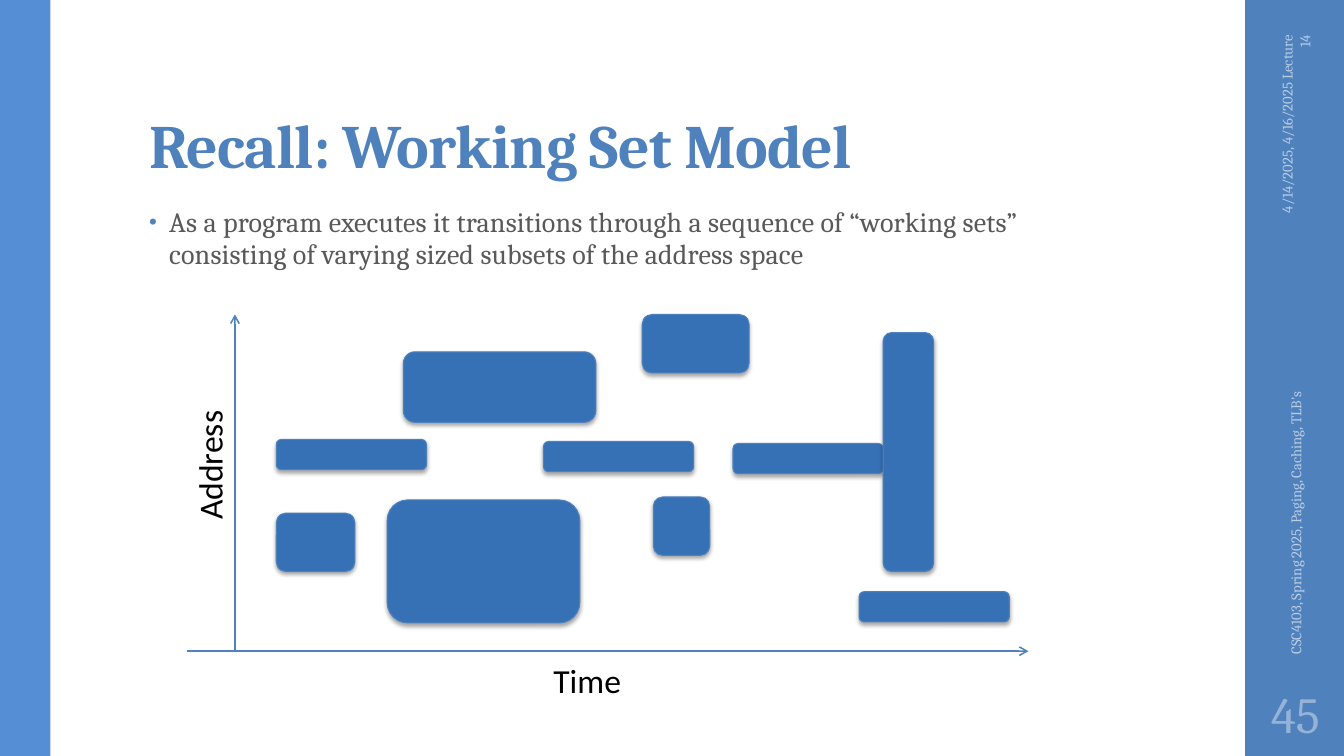
from lxml import etree
from pptx import Presentation
from pptx import util as u
from pptx.dml.color import RGBColor
from pptx.enum import shapes, text
from pptx.oxml import parse_xml
from pptx.oxml.ns import qn, nsdecls

PX = 9144  # EMU, 100 px to the inch
COLORS = {
    "accent": "4F81BD", "left bar": "558ED5", "block": "3771B5", "body": "595959",
    "footer": "B9CDE5", "number": "95B3D7", "label": "000000",
}


def rgb(name):
    return RGBColor.from_string(COLORS[name])


def write(shape, wording, size, color, font="Cambria", align=text.PP_ALIGN.LEFT,
          anchor=text.MSO_ANCHOR.TOP, wrap=True):
    """Fill a shape with one formatted paragraph and return the paragraph."""
    frame = shape.text_frame
    frame.word_wrap = wrap
    frame.vertical_anchor = anchor
    frame.text = wording
    paragraph = frame.paragraphs[0]
    paragraph.alignment = align
    paragraph.font.name = font
    paragraph.font.size = u.Pt(size)
    paragraph.font.color.rgb = rgb(color)
    return paragraph


presentation = Presentation()
presentation.slide_width = u.Emu(1333 * PX)
presentation.slide_height = u.Emu(750 * PX)
slide = presentation.slides.add_slide(presentation.slide_layouts[5])

# Side bars
for left, width, color in [(1235, 100, "accent"), (0, 50, "left bar")]:
    bar = slide.shapes.add_shape(
        shapes.MSO_SHAPE.RECTANGLE, left * PX, 0, width * PX, 750 * PX)
    bar.shadow.inherit = False
    bar.fill.solid()
    bar.fill.fore_color.rgb = rgb(color)
    bar.line.fill.background()

# Title
title = slide.shapes.title
title.left, title.top, title.width, title.height = (
    length * PX for length in (138, 32, 1060, 153))
paragraph = write(title, "Recall: Working Set Model", 44, "accent",
                  anchor=text.MSO_ANCHOR.BOTTOM)
paragraph.font.bold = True
paragraph.line_spacing = 0.9
paragraph.runs[0]._r.get_or_add_rPr().set("spc", "-50")
title.text_frame.auto_size = text.MSO_AUTO_SIZE.NONE
title.text_frame.margin_top = 3 * PX
title.text_frame.margin_bottom = 5 * PX

# Bulleted statement
body = slide.shapes.add_textbox(138 * PX, 200 * PX, 940 * PX, 476 * PX)
paragraph = write(
    body,
    "As a program executes it transitions through a sequence of “working sets” "
    "consisting of varying sized subsets of the address space", 20, "body")
paragraph.line_spacing = 0.95
paragraph.space_before = u.Pt(14)
paragraph.space_after = u.Pt(2)
paragraph.runs[0]._r.get_or_add_rPr().set("spc", "10")
properties = paragraph._p.get_or_add_pPr()
properties.set("marL", str(20 * PX))
properties.set("indent", str(-20 * PX))
bullet_parts = [
    f'<a:buClr {nsdecls("a")}><a:srgbClr val="{COLORS["accent"]}"/></a:buClr>',
    f'<a:buSzPct {nsdecls("a")} val="80000"/>',
    f'<a:buFont {nsdecls("a")} typeface="Arial"/>',
    f'<a:buChar {nsdecls("a")} char="•"/>',
]
default_font = properties.find(qn("a:defRPr"))
for part in bullet_parts:
    default_font.addprevious(parse_xml(part))

# Footer texts on the right bar
footers = [
    (1181, 109, 208, "4/14/2025, 4/16/2025 Lecture 14", text.PP_ALIGN.RIGHT),
    (1089, 443, 392, "CSC4103, Spring 2025, Paging, Caching, TLB's", text.PP_ALIGN.LEFT),
]
for left, top, width, wording, align in footers:
    footer = slide.shapes.add_textbox(left * PX, top * PX, width * PX, 40 * PX)
    footer.rotation = 270
    write(footer, wording, 10.5, "footer", align=align, anchor=text.MSO_ANCHOR.MIDDLE)

number = slide.shapes.add_textbox(1235 * PX, 675 * PX, 100 * PX, 65 * PX)
write(number, "45", 36, "number", align=text.PP_ALIGN.CENTER,
      anchor=text.MSO_ANCHOR.MIDDLE)
number.text_frame.margin_left = number.text_frame.margin_right = 5 * PX

# Axes and their labels
for start_x, start_y, end_x, end_y in [(185, 646, 1020, 646), (233, 646, 233, 312)]:
    axis = slide.shapes.add_connector(
        shapes.MSO_CONNECTOR.STRAIGHT,
        start_x * PX, start_y * PX, end_x * PX, end_y * PX)
    axis.line.color.rgb = rgb("accent")
    axis.line.width = u.Pt(1.1)
    etree.SubElement(axis.line._get_or_add_ln(), qn("a:tailEnd"), type="arrow")
    etree.SubElement(axis._element.spPr, qn("a:effectLst"))

for left, top, width, rotation, wording in [
        (539, 650, 90, 0, "Time"), (142, 435, 131, 270, "Address")]:
    label = slide.shapes.add_textbox(left * PX, top * PX, width * PX, 50 * PX)
    label.rotation = rotation
    write(label, wording, 24, "label", font="Calibri", wrap=False)
    label.text_frame.auto_size = text.MSO_AUTO_SIZE.SHAPE_TO_FIT_TEXT

# Working sets: left, top, width, height
working_sets = [
    (274, 509, 78, 58), (274, 436, 149, 30), (384, 496, 191, 122),
    (400, 349, 191, 70), (539, 438, 149, 30), (648, 493, 56, 58),
    (637, 312, 106, 58), (727, 440, 149, 30), (876, 330, 50, 237),
    (852, 587, 149, 30),
]
for bounds in working_sets:
    block = slide.shapes.add_shape(
        shapes.MSO_SHAPE.ROUNDED_RECTANGLE, *(length * PX for length in bounds))
    block.fill.solid()
    block.fill.fore_color.rgb = rgb("block")
    block.line.color.rgb = rgb("accent")
    block.line.width = u.Pt(0.75)
    block.shadow.inherit = False
    effects = block._element.spPr.find(qn("a:effectLst"))
    effects.append(parse_xml(
        f'<a:outerShdw {nsdecls("a")} blurRad="{u.Pt(3.1)}" dist="{u.Pt(1.8)}" '
        'dir="5400000" rotWithShape="0"><a:srgbClr val="000000">'
        '<a:alpha val="35000"/></a:srgbClr></a:outerShdw>'))

presentation.save("out.pptx")
